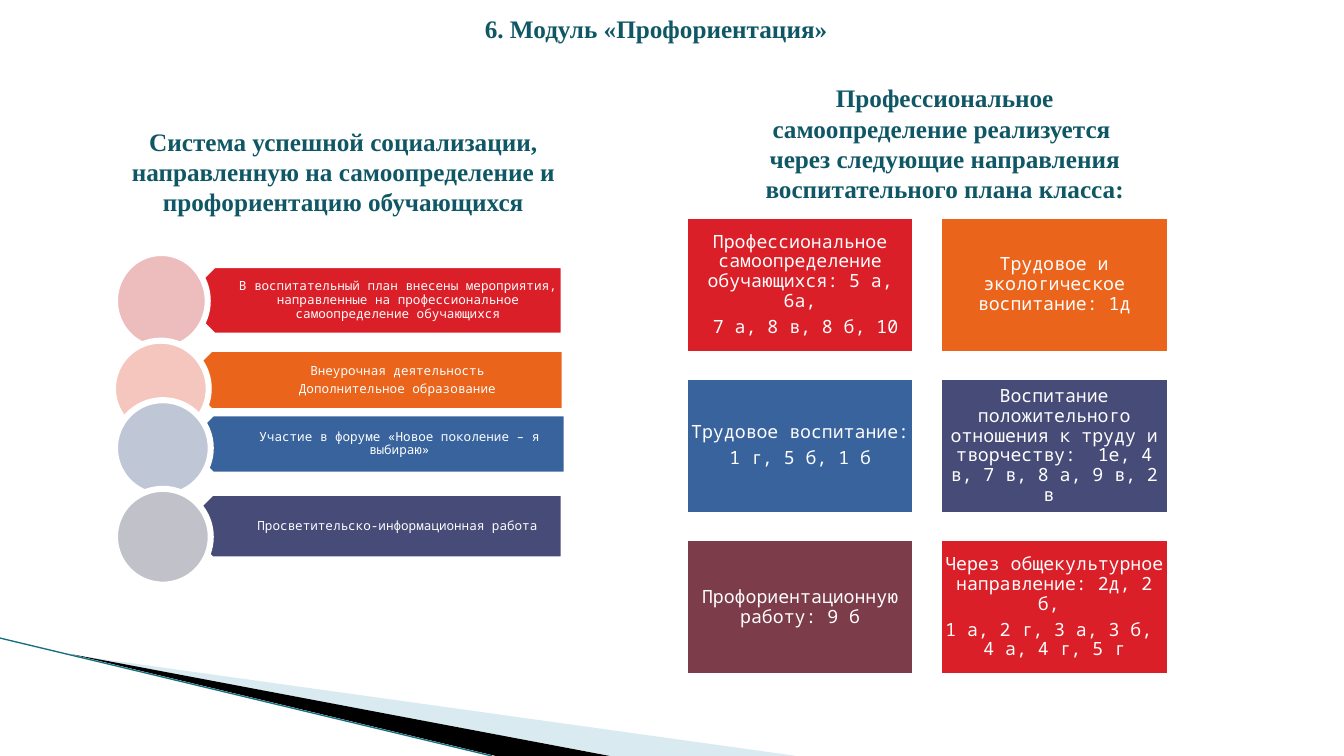
from dataclasses import dataclass

from lxml.etree import SubElement
from pptx import Presentation
from pptx.dml.color import RGBColor
from pptx.enum.shapes import MSO_CONNECTOR, MSO_SHAPE
from pptx.enum.text import MSO_ANCHOR, MSO_AUTO_SIZE, PP_ALIGN
from pptx.oxml.ns import qn
from pptx.util import Inches, Pt

WHITE = RGBColor(0xFF, 0xFF, 0xFF)
BLACK = RGBColor(0x00, 0x00, 0x00)
TEAL = RGBColor(0x10, 0x57, 0x66)
LINE_TEAL = RGBColor(0x14, 0x70, 0x80)
PALE_BLUE = RGBColor(0xA0, 0xCB, 0xDC)
RED = RGBColor(0xDA, 0x1F, 0x28)
ORANGE = RGBColor(0xEB, 0x64, 0x1B)
BLUE = RGBColor(0x39, 0x63, 0x9D)
INDIGO = RGBColor(0x47, 0x4B, 0x78)
MAROON = RGBColor(0x7D, 0x3C, 0x4A)
PALE_RED = RGBColor(0xED, 0xBD, 0xBE)
PALE_ORANGE = RGBColor(0xF5, 0xC6, 0xBD)
PALE_INDIGO = RGBColor(0xC1, 0xC1, 0xCA)
PALE_STEEL = RGBColor(0xBF, 0xC6, 0xD5)

SERIF = "Times New Roman"
MONO = "Noto Sans Mono"
BAR_WIDTH = 3.82
CARD_WIDTH, CARD_HEIGHT = 2.29, 1.37
CARD_LEFT, CARD_TOP = 6.79, 2.14
CARD_STEP_X, CARD_STEP_Y = 2.52, 1.6


@dataclass
class Bar:
    lines: list[str]
    left: float
    top: float
    height: float
    text_left: float
    color: RGBColor
    circle: tuple[float, float, float, float]
    circle_color: RGBColor


@dataclass
class Card:
    lines: list[str]
    color: RGBColor


BARS = [
    Bar(["В воспитательный план внесены мероприятия, направленные на "
         "профессиональное самоопределение обучающихся"],
        1.77, 2.63, 0.7, 1.95, RED, (1.14, 2.51, 0.92, 0.95), PALE_RED),
    Bar(["Внеурочная деятельность", "Дополнительное образование"],
        1.78, 3.46, 0.62, 1.93, ORANGE, (1.12, 3.38, 0.95, 0.95), PALE_ORANGE),
    Bar(["Участие в форуме «Новое поколение – я выбираю»"],
        1.8, 4.1, 0.61, 1.95, BLUE, (1.14, 3.97, 0.95, 0.95), PALE_STEEL),
    Bar(["Просветительско-информационная работа"],
        1.77, 4.89, 0.66, 1.94, INDIGO, (1.14, 4.85, 0.95, 0.95), PALE_INDIGO),
]

CARDS = [
    Card(["Профессиональное самоопределение обучающихся: 5 а, 6а,",
          " 7 а, 8 в, 8 б, 10"], RED),
    Card(["Трудовое и экологическое воспитание: 1д"], ORANGE),
    Card(["Трудовое воспитание: ", "1 г, 5 б, 1 б"], BLUE),
    Card(["Воспитание положительного отношения к труду и творчеству:  1е, 4 в, "
          "7 в, 8 а, 9 в, 2 в "], INDIGO),
    Card(["Профориентационную работу: 9 б"], MAROON),
    Card(["Через общекультурное направление: 2д, 2 б, ",
          "1 а, 2 г, 3 а, 3 б,  4 а, 4 г, 5 г"], RED),
]


def write_text(frame, lines: list[str], *, size: float, font: str = MONO,
               color: RGBColor = WHITE, bold: bool = False, wrap: bool = True,
               anchor=MSO_ANCHOR.MIDDLE, align=PP_ALIGN.CENTER,
               insets: tuple[float, float, float, float] = (0.1, 0.05, 0.1, 0.05),
               line_spacing: float = 1.0, space_after: float = 0) -> None:
    frame.word_wrap = wrap
    frame.auto_size = MSO_AUTO_SIZE.NONE
    frame.vertical_anchor = anchor
    (frame.margin_left, frame.margin_top,
     frame.margin_right, frame.margin_bottom) = map(Inches, insets)
    for index, line in enumerate(lines):
        paragraph = frame.add_paragraph() if index else frame.paragraphs[0]
        paragraph.alignment = align
        paragraph.line_spacing = line_spacing
        paragraph.space_after = Pt(space_after)
        run = paragraph.add_run()
        run.text = line
        run.font.name = font
        run.font.size = Pt(size)
        run.font.bold = bold
        run.font.color.rgb = color


def add_box(slide, left: float, top: float, width: float, height: float):
    return slide.shapes.add_textbox(
        Inches(left), Inches(top), Inches(width), Inches(height)).text_frame


def add_filled(slide, kind, left: float, top: float, width: float,
               height: float, color: RGBColor):
    shape = slide.shapes.add_shape(
        kind, Inches(left), Inches(top), Inches(width), Inches(height))
    shape.shadow.inherit = False
    shape.fill.solid()
    shape.fill.fore_color.rgb = color
    shape.line.color.rgb = WHITE
    shape.line.width = Pt(4.33)
    return shape


def add_wedge(slide, points: list[tuple[float, float]], color: RGBColor,
              opacity: int = 100) -> None:
    corners = [(Inches(x), Inches(y)) for x, y in points]
    builder = slide.shapes.build_freeform(*corners[0])
    builder.add_line_segments(corners[1:], close=True)
    wedge = builder.convert_to_shape()
    wedge.shadow.inherit = False
    wedge.fill.solid()
    wedge.fill.fore_color.rgb = color
    wedge.line.fill.background()
    if opacity < 100:
        color_element = next(wedge.fill._xPr.iter(qn("a:srgbClr")))
        SubElement(color_element, qn("a:alpha")).set("val", str(opacity * 1000))


def add_heading(slide, lines: list[str], left: float, top: float, width: float,
                height: float, **text_format) -> None:
    write_text(add_box(slide, left, top, width, height), lines, size=18,
               font=SERIF, color=TEAL, bold=True, anchor=MSO_ANCHOR.TOP,
               **text_format)


def add_bar(slide, bar: Bar) -> None:
    plate = add_filled(slide, MSO_SHAPE.PENTAGON, bar.left, bar.top, BAR_WIDTH,
                       bar.height, bar.color)
    plate.rotation = 180
    text_width = bar.left + BAR_WIDTH - bar.text_left
    write_text(add_box(slide, bar.text_left, bar.top, text_width, bar.height),
               bar.lines, size=9, insets=(0.42, 0.04, 0.07, 0.04),
               line_spacing=0.9, space_after=3.15)
    add_filled(slide, MSO_SHAPE.OVAL, *bar.circle, bar.circle_color)


def main() -> None:
    presentation = Presentation()
    presentation.slide_width = Inches(13.33)
    presentation.slide_height = Inches(7.5)
    slide = presentation.slides.add_slide(presentation.slide_layouts[6])

    # Corner decoration
    add_wedge(slide, [(0.73, 6.5), (7.9, 7.5), (6.06, 7.5)], PALE_BLUE, 40)
    add_wedge(slide, [(0.71, 6.49), (6.05, 7.5), (4.92, 7.5)], BLACK)
    edge = slide.shapes.add_connector(
        MSO_CONNECTOR.STRAIGHT, Inches(0), Inches(6.33), Inches(4.88), Inches(7.5))
    edge.line.color.rgb = LINE_TEAL
    edge.line.width = Pt(0.95)
    SubElement(edge.line._ln.getparent(), qn("a:effectLst"))

    # Title
    add_heading(slide, ["6. Модуль «Профориентация»"], 4.71, 0.08, 3.7, 0.4,
                wrap=False, align=PP_ALIGN.LEFT)

    # Left list of bars with circles
    for bar in BARS:
        add_bar(slide, bar)

    # Right grid of cards
    for index, card in enumerate(CARDS):
        row, column = divmod(index, 2)
        shape = add_filled(slide, MSO_SHAPE.RECTANGLE,
                           CARD_LEFT + column * CARD_STEP_X,
                           CARD_TOP + row * CARD_STEP_Y,
                           CARD_WIDTH, CARD_HEIGHT, card.color)
        write_text(shape.text_frame, card.lines, size=13,
                   insets=(0.05, 0.05, 0.05, 0.05),
                   line_spacing=0.9, space_after=4.55)

    # Column headings
    add_heading(slide, ["Система успешной социализации, направленную на "
                        "самоопределение и профориентацию обучающихся"],
                1.17, 1.2, 4.47, 1.01)
    add_heading(slide, ["Профессиональное самоопределение реализуется ",
                        "через следующие направления воспитательного плана класса:"],
                7.21, 0.77, 4.32, 1.31)

    presentation.save("out.pptx")


if __name__ == "__main__":
    main()
